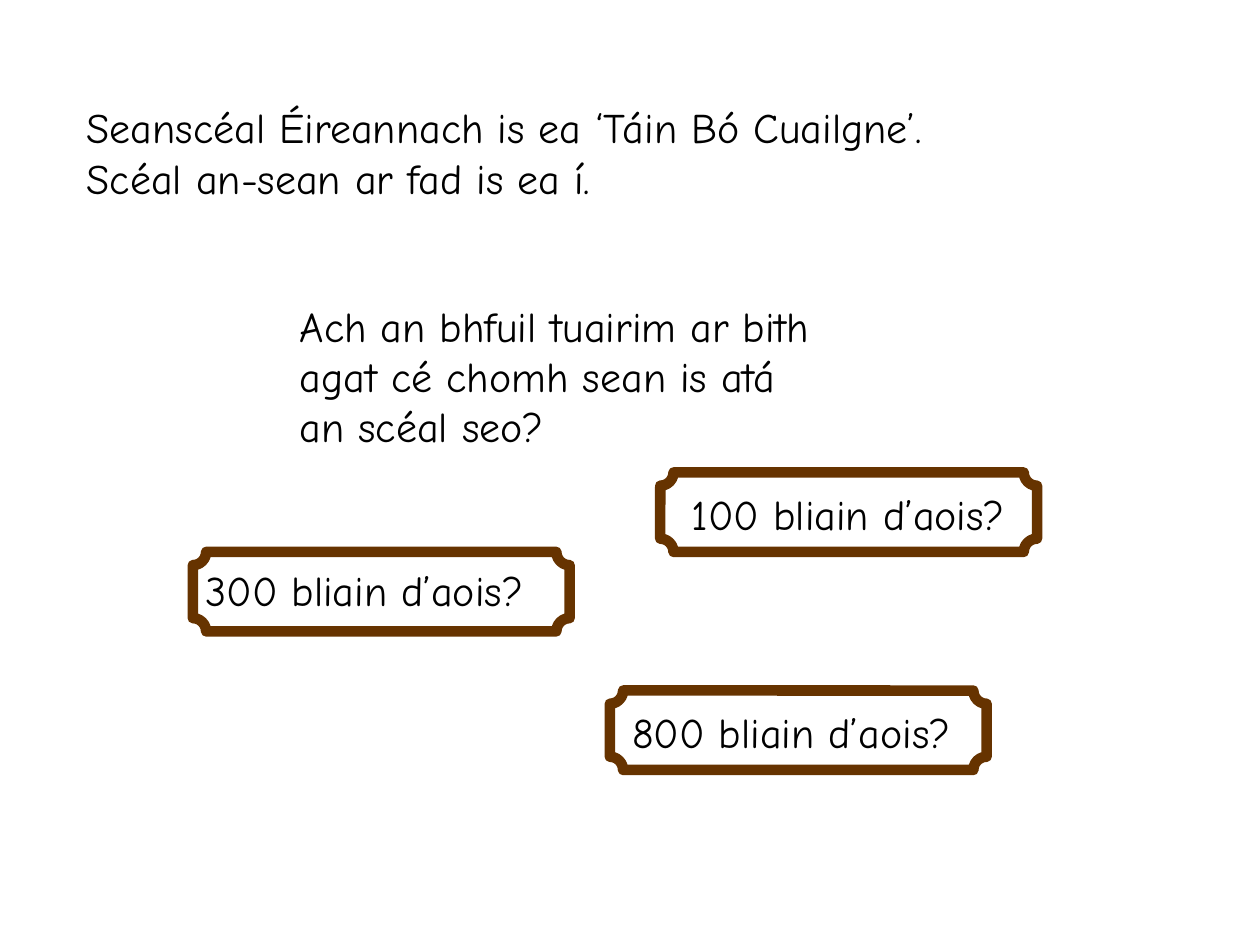
from dataclasses import dataclass

from pptx import Presentation
from pptx.dml.color import RGBColor
from pptx.enum.shapes import MSO_SHAPE
from pptx.enum.text import MSO_AUTO_SIZE
from pptx.util import Pt


@dataclass(frozen=True)
class Theme:
    font: str = "Comic Neue"
    size: int = 24
    ink: RGBColor = RGBColor(0, 0, 0)
    frame: RGBColor = RGBColor(0x66, 0x33, 0x00)
    edge: int = 6


class Page:
    def __init__(self, slide, theme):
        self.slide = slide
        self.theme = theme

    def text(self, lines, left, top, width, height, wrap=True):
        box = self.slide.shapes.add_textbox(
            Pt(left), Pt(top), Pt(width), Pt(height))
        body = box.text_frame
        body.text = "\n".join(lines)
        body.word_wrap = wrap
        body.auto_size = MSO_AUTO_SIZE.SHAPE_TO_FIT_TEXT
        for para in body.paragraphs:
            para.font.name = self.theme.font
            para.font.size = Pt(self.theme.size)
            para.font.color.rgb = self.theme.ink

    def plaque(self, left, top, width, height):
        shape = self.slide.shapes.add_shape(
            MSO_SHAPE.PLAQUE, Pt(left), Pt(top), Pt(width), Pt(height))
        shape.adjustments[0] = 0.167
        shape.shadow.inherit = False
        shape.fill.background()
        shape.line.color.rgb = self.theme.frame
        shape.line.width = Pt(self.theme.edge)


def main():
    deck = Presentation()
    deck.slide_width, deck.slide_height = Pt(720), Pt(540)
    page = Page(deck.slides.add_slide(deck.slide_layouts[6]), Theme())

    # Introduction and question
    page.text(["Seanscéal Éireannach is ea ‘Táin Bó Cuailgne’. "
               "Scéal an-sean ar fad is ea í."], 42.5, 54.7, 544.3, 65)
    page.text(["Ach an bhfuil tuairim ar bith agat cé chomh sean is atá",
               "an scéal seo?"], 164.2, 168, 342.7, 93.6)

    # Possible ages: years, text left, top and width, frame left and top
    ages = [
        (100, 388.1, 275.8, 202.3, 377.3, 270),
        (800, 354.2, 400.3, 205.9, 348.5, 394.6),
        (300, 110.2, 319, 205.9, 110.2, 315.4),
    ]
    for years, left, top, width, *_ in ages:
        page.text([f"{years} bliain d’aois?"], left, top, width, 36, wrap=False)

    # Frames lie in front of the answers
    for *_, left, top in reversed(ages):
        page.plaque(left, top, 215.3, 45.4)

    deck.save("out.pptx")


if __name__ == "__main__":
    main()
